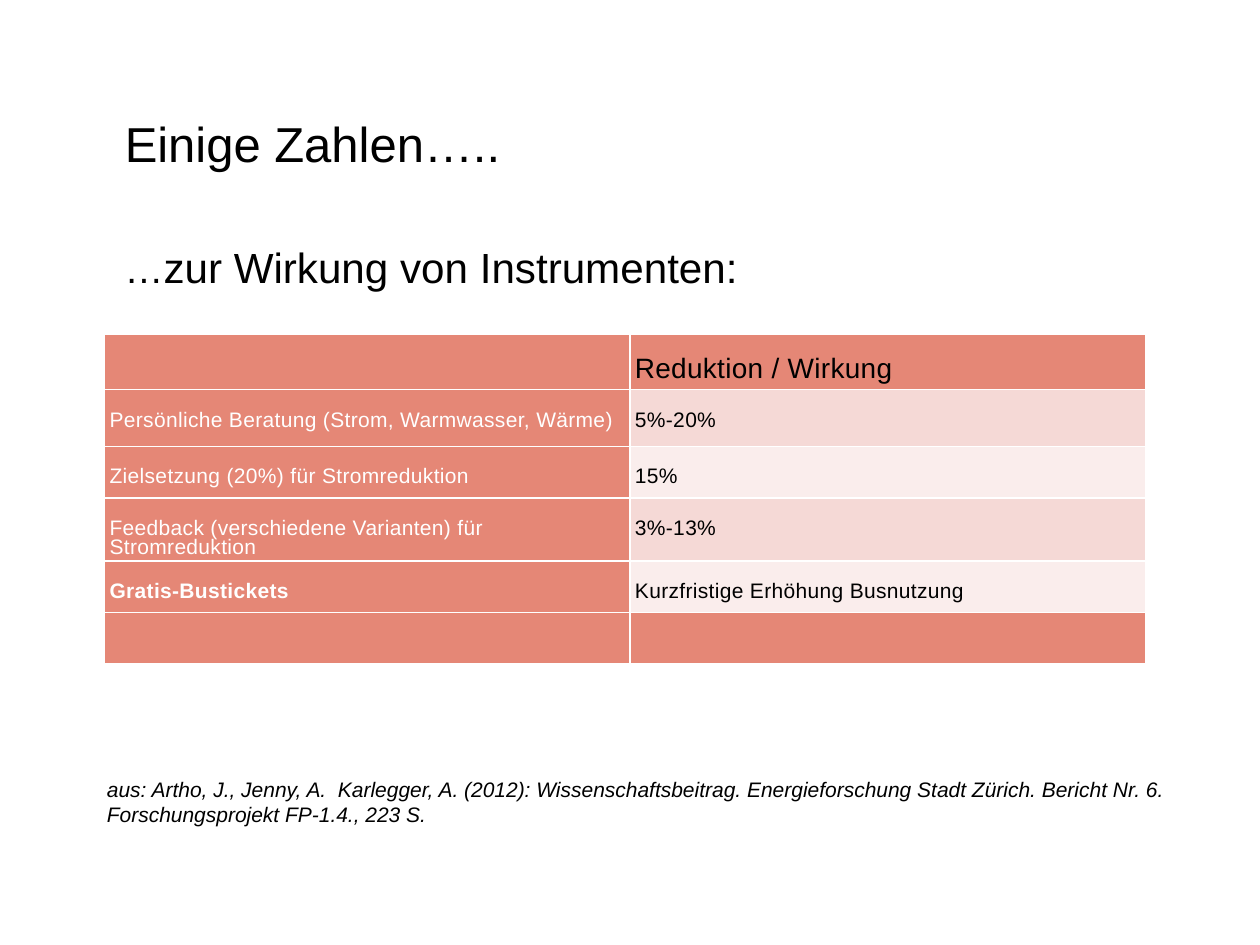
from collections import namedtuple
from dataclasses import dataclass

from lxml.etree import SubElement
from pptx import Presentation
from pptx.dml.color import RGBColor as Color
from pptx.enum.text import MSO_ANCHOR as Anchor, MSO_AUTO_SIZE as AutoSize, PP_ALIGN as Align
from pptx.oxml.ns import qn
from pptx.util import Inches, Pt

Box = namedtuple("Box", "left top width height")
SLIDE_WIDTH, SLIDE_HEIGHT = Inches(10), Inches(7.5)


@dataclass(frozen=True)
class Theme:
    font: str = "Arial"
    dark: str = "000000"
    light: str = "FFFFFF"
    accent: str = "E58776"
    bands: tuple = ("F5D9D6", "FAEDEC")
    title: float = 28
    subtitle: float = 24.1
    ellipsis: float = 22.2
    header: float = 16
    body: float = 12


THEME = Theme()
HEADER = ("", "Reduktion / Wirkung")
MEASURES = (
    ("Persönliche Beratung (Strom, Warmwasser, Wärme)", "5%-20%"),
    ("Zielsetzung (20%) für Stromreduktion", "15%"),
    ("Feedback (verschiedene Varianten) für Stromreduktion", "3%-13%"),
    ("Gratis-Bustickets", "Kurzfristige Erhöhung Busnutzung"),
)
BOLD_MEASURE = "Gratis-Bustickets"
COLUMN_WIDTHS = (4.17, 4.09)
ROW_HEIGHTS = (0.44, 0.45, 0.41, 0.5, 0.41, 0.41)


def share(left, top, width, height):
    """Turn percentages of the slide's size into a box."""
    return Box(int(SLIDE_WIDTH * left / 100), int(SLIDE_HEIGHT * top / 100),
               int(SLIDE_WIDTH * width / 100), int(SLIDE_HEIGHT * height / 100))


def add_text(paragraph, text, size, color=THEME.dark, bold=False, italic=False,
             line_spacing=None, tracking=None):
    run = paragraph.add_run()
    run.text = text
    font = run.font
    font.name, font.size, font.bold, font.italic = THEME.font, Pt(size), bold, italic
    font.color.rgb = Color.from_string(color)
    paragraph.alignment = Align.LEFT
    if line_spacing:
        paragraph.line_spacing = line_spacing
    if tracking:
        run._r.get_or_add_rPr().set("spc", str(tracking))


def set_margins(target, left, top, right, bottom):
    target.margin_left, target.margin_top = Inches(left), Inches(top)
    target.margin_right, target.margin_bottom = Inches(right), Inches(bottom)


def place_title(slide, box):
    title = slide.shapes.title
    title.left, title.top, title.width, title.height = box
    frame = title.text_frame
    frame.vertical_anchor, frame.auto_size = Anchor.BOTTOM, AutoSize.SHAPE_TO_FIT_TEXT
    set_margins(frame, 0.1, 0.05, 0.1, 0.2)
    paragraph = frame.paragraphs[0]
    add_text(paragraph, "Einige Zahlen…..", THEME.title, line_spacing=0.95)
    properties = paragraph._p.get_or_add_pPr()
    properties.set("marL", str(Inches(0.87)))
    properties.set("indent", "0")


def add_text_box(slide, box):
    frame = slide.shapes.add_textbox(*box).text_frame
    frame.word_wrap = True
    return frame


def place_subtitle(slide, box):
    frame = add_text_box(slide, box)
    set_margins(frame, 0, 0, 0.1, 0.05)
    paragraph = frame.paragraphs[0]
    add_text(paragraph, "…", THEME.ellipsis, line_spacing=0.9)
    add_text(paragraph, "zur Wirkung von Instrumenten:", THEME.subtitle, line_spacing=0.9)


def place_reference(slide, box):
    frame = add_text_box(slide, box)
    frame.auto_size = AutoSize.SHAPE_TO_FIT_TEXT
    add_text(frame.paragraphs[0],
             "aus: Artho, J., Jenny, A.  Karlegger, A. (2012): Wissenschaftsbeitrag. "
             "Energieforschung Stadt Zürich. Bericht Nr. 6. Forschungsprojekt FP-1.4., 223 S.",
             THEME.body, italic=True)


def format_cell(cell, fill):
    """Draw white cell borders and then the fill, in schema order."""
    properties = cell._tc.get_or_add_tcPr()
    for side in ("lnL", "lnR", "lnT", "lnB"):
        line = SubElement(properties, qn(f"a:{side}"), w=str(Pt(1)))
        solid = SubElement(line, qn("a:solidFill"))
        SubElement(solid, qn("a:srgbClr"), val=THEME.light)
    cell.fill.solid()
    cell.fill.fore_color.rgb = Color.from_string(fill)


def place_table(slide, box):
    rows = (HEADER, *MEASURES, ("", ""))
    table = slide.shapes.add_table(len(rows), len(HEADER), *box).table
    table.first_row = table.horz_banding = False
    for column, width in zip(table.columns, COLUMN_WIDTHS):
        column.width = int(box.width * width / sum(COLUMN_WIDTHS))
    for row, height in zip(table.rows, ROW_HEIGHTS):
        row.height = int(box.height * height / sum(ROW_HEIGHTS))

    for row_index, texts in enumerate(rows):
        is_measure = 0 < row_index <= len(MEASURES)
        for column_index, text in enumerate(texts):
            cell = table.cell(row_index, column_index)
            is_value = is_measure and column_index == 1
            format_cell(cell, THEME.bands[(row_index - 1) % 2] if is_value else THEME.accent)
            if not text:
                continue
            if is_measure:
                set_margins(cell, 0.04, 0.18, 0.08, 0.01)
            else:
                set_margins(cell, 0.04, 0.25, 0.08, 0.04)
            add_text(cell.text_frame.paragraphs[0], text,
                     THEME.body if is_measure else THEME.header,
                     color=THEME.dark if column_index else THEME.light,
                     bold=text == BOLD_MEASURE, line_spacing=Pt(11), tracking=20)


def main():
    presentation = Presentation()
    presentation.slide_width, presentation.slide_height = SLIDE_WIDTH, SLIDE_HEIGHT
    slide = presentation.slides.add_slide(presentation.slide_layouts[5])
    place_title(slide, share(0.2, 11.87, 96.4, 9.2))
    place_subtitle(slide, share(9.9, 26.13, 86.6, 5.73))
    place_table(slide, share(8.3, 35.33, 82.6, 34.93))
    place_reference(slide, share(7.5, 81.47, 89.8, 6.67))
    presentation.save("out.pptx")


if __name__ == "__main__":
    main()
